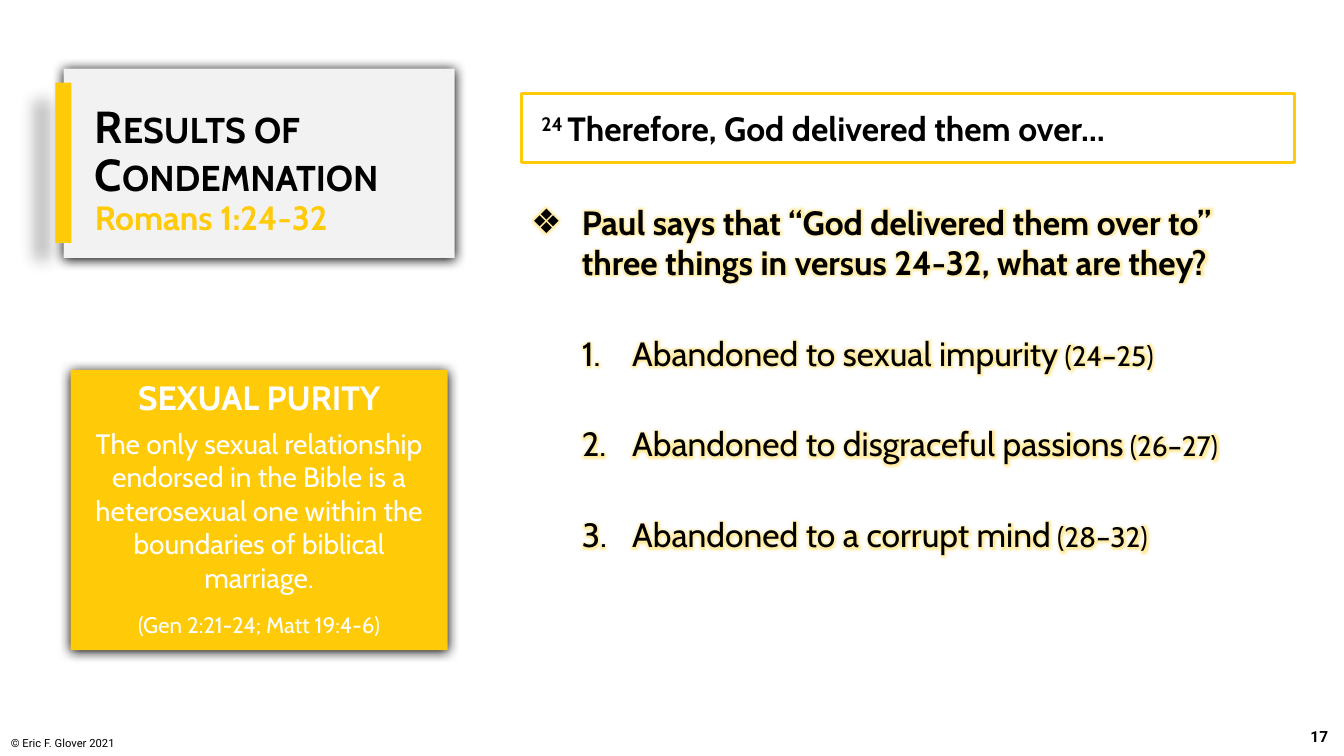
from dataclasses import dataclass

from lxml.etree import SubElement
from pptx import Presentation
from pptx.dml.color import RGBColor
from pptx.enum.shapes import MSO_SHAPE
from pptx.enum.text import MSO_ANCHOR, MSO_AUTO_SIZE, PP_ALIGN
from pptx.oxml.ns import qn
from pptx.util import Inches, Pt


@dataclass(frozen=True)
class Theme:
    """Colours, fonts and type sizes of the slide."""
    gold: str = "FFCA08"
    gray: str = "F2F2F2"
    black: str = "000000"
    white: str = "FFFFFF"
    font: str = "Cabin"
    small_font: str = "Roboto"
    title: int = 32
    text: int = 24
    detail: int = 20
    reference: int = 16
    number: int = 11
    footer: int = 8


T = Theme()
CARD_SHADOW = dict(color=T.black, opacity=100, blur=8.5, dist=1, angle=90)
BAR_SHADOW = dict(color=T.black, opacity=28, blur=11.8, dist=19.7, angle=141)


def add_color(parent, color, opacity):
    """Add a colour with an opacity in percent to an effect."""
    clr = SubElement(parent, qn("a:srgbClr"), val=color)
    SubElement(clr, qn("a:alpha"), val=str(opacity * 1000))


def add_run(p, text, size=T.text, color=T.black, font=T.font, bold=False,
            caps=None, raised=None, glow=False):
    """Add formatted text to a paragraph."""
    r = p.add_run()
    r.text = text
    r.font.size, r.font.name, r.font.bold = Pt(size), font, bold
    r.font.color.rgb = RGBColor.from_string(color)
    rPr = r.font._element
    if caps:
        rPr.set("cap", caps)
    if raised:
        rPr.set("baseline", str(raised * 1000))
    if glow:
        effects = SubElement(rPr, qn("a:effectLst"))
        rPr.find(qn("a:solidFill")).addnext(effects)
        add_color(SubElement(effects, qn("a:glow"), rad=str(Pt(5))), T.gold, 40)


def space(p, before=0, after=0, line=1.0, align=PP_ALIGN.LEFT):
    """Set the spacing and alignment of a paragraph."""
    p.space_before, p.space_after = Pt(before), Pt(after)
    p.line_spacing, p.alignment = line, align


def set_frame(tf, anchor, insets):
    """Set wrapping, anchor and insets of a text frame."""
    tf.word_wrap, tf.auto_size = True, MSO_AUTO_SIZE.NONE
    tf.vertical_anchor = anchor
    tf.margin_left, tf.margin_top, tf.margin_right, tf.margin_bottom = map(Inches, insets)
    return tf


def place(s, sp, box):
    """Move a placeholder to a box, in front of earlier shapes."""
    sp.left, sp.top, sp.width, sp.height = map(Inches, box)
    s.shapes._spTree.append(sp._element)


def add_rect(s, box, fill, line=None, shadow=None):
    """Add a rectangle with an optional outline and shadow."""
    sp = s.shapes.add_shape(MSO_SHAPE.RECTANGLE, *map(Inches, box))
    sp.fill.solid()
    sp.fill.fore_color.rgb = RGBColor.from_string(fill)
    if line:
        sp.line.color.rgb = RGBColor.from_string(line)
        sp.line.width = Pt(2.25)
    else:
        sp.line.fill.background()
    sp.shadow.inherit = False
    if shadow:
        effects = sp._element.spPr.find(qn("a:effectLst"))
        outer = SubElement(effects, qn("a:outerShdw"), blurRad=str(Pt(shadow["blur"])),
                           dist=str(Pt(shadow["dist"])), dir=str(shadow["angle"] * 60000),
                           algn="ctr", rotWithShape="0")
        add_color(outer, shadow["color"], shadow["opacity"])
    return sp


def add_label(s, box, text, anchor, align=PP_ALIGN.LEFT, after=0, **fmt):
    """Add a small text box at the foot of the slide."""
    tf = set_frame(s.shapes.add_textbox(*map(Inches, box)).text_frame, anchor,
                   (0.1, 0.05, 0.1, 0.05))
    space(tf.paragraphs[0], after=after, align=align)
    add_run(tf.paragraphs[0], text, font=T.small_font, **fmt)


def title_card(s, box, lines, passage):
    """Build the gray title card with its gold bar."""
    x, y, w, h = box
    add_rect(s, box, T.gray, shadow=CARD_SHADOW)
    add_rect(s, (x - 0.08, y + 0.14, 0.16, h - 0.29), T.gold, shadow=BAR_SHADOW)
    sp = s.shapes.title
    place(s, sp, (x + 0.31, y + 0.08, w - 0.38, h - 0.01))
    p = set_frame(sp.text_frame, MSO_ANCHOR.MIDDLE, (0, 0, 0, 0)).paragraphs[0]
    space(p, line=0.9)
    for line in lines:
        add_run(p, line, size=T.title, bold=True, caps="small")
        p.add_line_break()
    add_run(p, passage, color=T.gold, bold=True, caps="none")


def set_bullet(p, level, tag, **kind):
    """Give a paragraph a hanging bullet or number."""
    p.level = level
    pPr = p._p.get_or_add_pPr()
    pPr.set("marL", str(Inches(0.5 * (level + 1))))
    pPr.set("indent", str(Inches(-0.5)))
    SubElement(SubElement(pPr, qn("a:buClr")), qn("a:srgbClr"), val=T.black)
    SubElement(pPr, qn("a:buFont"), typeface=T.font)
    SubElement(pPr, qn(tag), **kind)


def question_list(s, box, question, answers):
    """Build the question and its numbered answers."""
    sp = s.placeholders[1]
    place(s, sp, box)
    tf = set_frame(sp.text_frame, MSO_ANCHOR.TOP, (0.1, 0.05, 0.1, 0.05))
    p = tf.paragraphs[0]
    space(p, after=36)
    set_bullet(p, 0, "a:buChar", char="❖")
    add_run(p, question, bold=True, glow=True)
    for answer, verses in answers:
        p = tf.add_paragraph()
        space(p, after=36)
        set_bullet(p, 1, "a:buAutoNum", type="arabicPeriod")
        add_run(p, answer, glow=True)
        add_run(p, f" ({verses})", size=T.detail, glow=True)


def verse_box(s, box, number, verse):
    """Build the outlined verse."""
    sp = add_rect(s, box, T.white, line=T.gold)
    p = set_frame(sp.text_frame, MSO_ANCHOR.MIDDLE, (0.2, 0, 0.2, 0)).paragraphs[0]
    space(p)
    add_run(p, f"{number} ", bold=True, raised=30)
    add_run(p, verse, bold=True)


def note_card(s, box, heading, note, reference):
    """Build the gold note card."""
    sp = add_rect(s, box, T.gold, shadow=CARD_SHADOW)
    tf = set_frame(sp.text_frame, MSO_ANCHOR.MIDDLE, (0.2, 0, 0.2, 0.05))
    p = tf.paragraphs[0]
    space(p, before=6, after=6, align=PP_ALIGN.CENTER)
    add_run(p, heading, color=T.white, bold=True)
    for text, size in ((note, T.detail), (reference, T.reference)):
        p = tf.add_paragraph()
        space(p, after=12, align=PP_ALIGN.CENTER)
        add_run(p, text, size=size, color=T.white)


def main():
    """Build and save the slide."""
    prs = Presentation()
    prs.slide_width, prs.slide_height = Inches(13.33), Inches(7.5)
    s = prs.slides.add_slide(prs.slide_layouts[1])
    add_label(s, (12.84, 7.11, 0.49, 0.4), "17", MSO_ANCHOR.MIDDLE, PP_ALIGN.CENTER,
              after=6, size=T.number, bold=True)
    add_label(s, (0.01, 7.21, 1.57, 0.28), "© Eric F. Glover 2021", MSO_ANCHOR.BOTTOM,
              size=T.footer)
    title_card(s, (0.63, 0.68, 3.88, 1.88), ("Results of", "Condemnation"), "Romans 1:24-32")
    question_list(s, (5.17, 1.95, 7.67, 4.32),
                  "Paul says that “God delivered them over to” three things "
                  "in versus 24-32, what are they?",
                  (("Abandoned to sexual impurity", "24–25"),
                   ("Abandoned to disgraceful passions", "26–27"),
                   ("Abandoned to a corrupt mind", "28–32")))
    verse_box(s, (5.17, 0.93, 7.67, 0.68), 24, "Therefore, God delivered them over…")
    note_card(s, (0.7, 3.67, 3.74, 2.78), "SEXUAL PURITY",
              "The only sexual relationship endorsed in the Bible is a heterosexual one "
              "within the boundaries of biblical marriage.",
              "(Gen 2:21-24; Matt 19:4-6)")
    prs.save("out.pptx")


if __name__ == "__main__":
    main()
